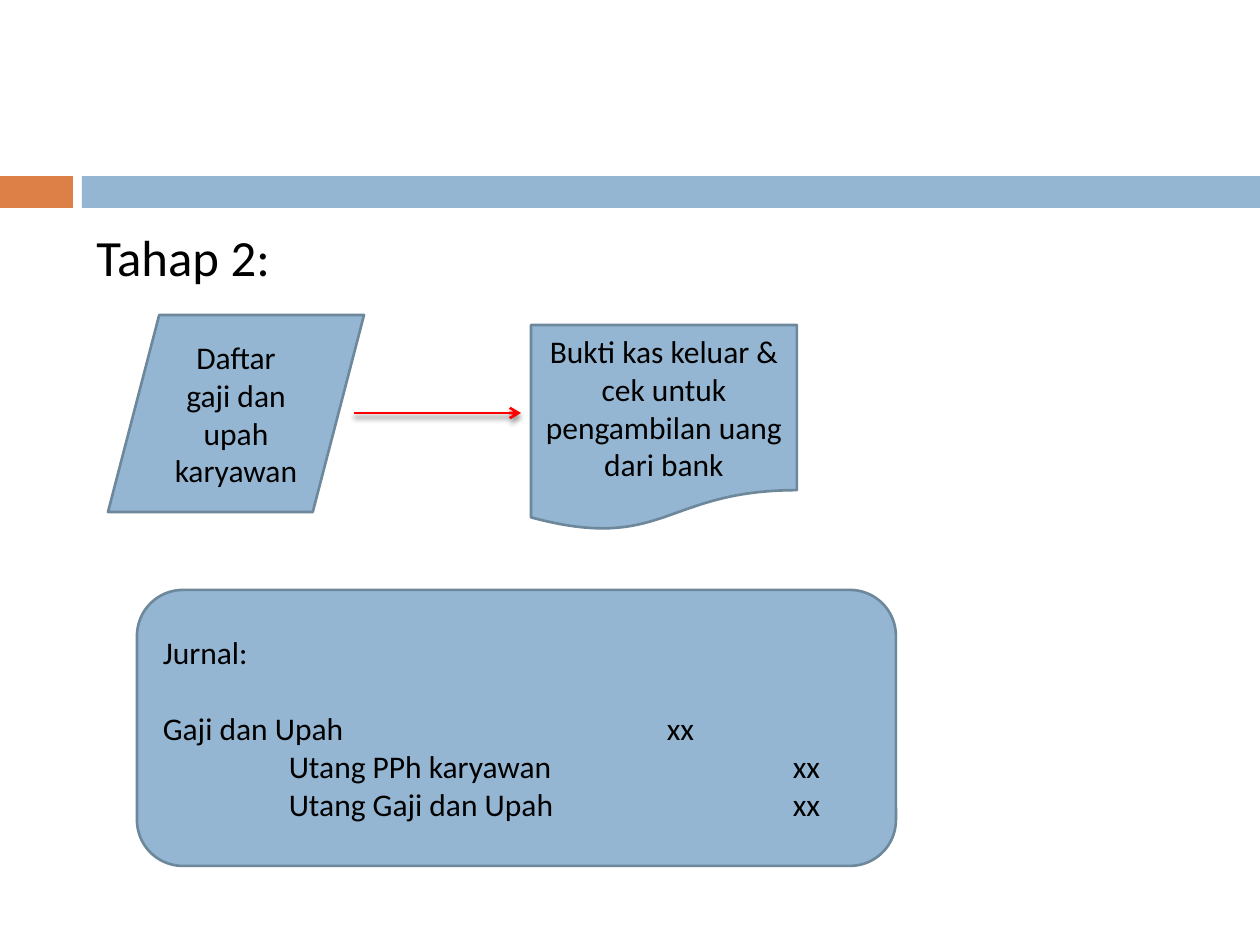
"""Build the payroll stage 2 slide with its document flow and journal entry."""
import pptx
import pptx.dml.color
import pptx.enum.shapes
import pptx.enum.text
import pptx.oxml
import pptx.oxml.ns
import pptx.util

PX = 914400 // 126
SHAPE = pptx.enum.shapes.MSO_SHAPE
ALIGN = pptx.enum.text.PP_ALIGN
ANCHOR = pptx.enum.text.MSO_ANCHOR
COLORS = {"orange": "DD8047", "blue": "94B6D2", "edge": "6D879B",
          "text": "000000", "arrow": "FF0000", "shadow": "000000"}
FONT = "Calibri"

BANDS = [((0, 176, 73, 32), "orange"), ((82, 176, 1178, 32), "blue")]
HEADING = ("Tahap 2:", (84, 220, 1124, 70))
DOCUMENTS = [
    (SHAPE.FLOWCHART_DATA, (108, 315, 256, 197), "Daftar gaji dan upah karyawan"),
    (SHAPE.FLOWCHART_DOCUMENT, (531, 325, 266, 206),
     "Bukti kas keluar & cek untuk pengambilan uang dari bank"),
]
FLOW = (354, 413, 521, 413)
JOURNAL_BOX = (137, 590, 759, 276)
JOURNAL = [
    ("Jurnal:", (), 0),
    ("Gaji dan Upah\txx", (4,), 22),
    ("\tUtang PPh karyawan\txx", (1, 5), 0),
    ("\tUtang Gaji dan Upah\txx", (1, 5), 0),
]


def px(values):
    return [value * PX for value in values]


def rgb(name):
    return pptx.dml.color.RGBColor.from_string(COLORS[name])


def style(paragraph, size, align=ALIGN.LEFT):
    paragraph.alignment = align
    for run in paragraph.runs:
        run.font.name = FONT
        run.font.size = pptx.util.Pt(size)
        run.font.color.rgb = rgb("text")


def add_block(slide, kind, box, fill, edge=None):
    block = slide.shapes.add_shape(kind, *px(box))
    block.shadow.inherit = False
    block.fill.solid()
    block.fill.fore_color.rgb = rgb(fill)
    if edge:
        block.line.color.rgb = rgb(edge)
        block.line.width = pptx.util.Pt(1.5)
    else:
        block.line.fill.background()
    block.text_frame.word_wrap = True
    block.text_frame.vertical_anchor = ANCHOR.MIDDLE
    return block


def set_tabs(paragraph, inches):
    stops = pptx.oxml.ns.qn("a:tabLst")
    tab_list = paragraph._p.get_or_add_pPr().makeelement(stops, {})
    for inch in inches:
        tab_list.append(tab_list.makeelement(
            pptx.oxml.ns.qn("a:tab"),
            {"pos": str(pptx.util.Inches(inch)), "algn": "l"}))
    paragraph._p.get_or_add_pPr().append(tab_list)


def add_flow(slide):
    flow = slide.shapes.add_connector(
        pptx.enum.shapes.MSO_CONNECTOR.STRAIGHT, *px(FLOW))
    flow.line.color.rgb = rgb("arrow")
    flow.line.width = pptx.util.Pt(1.5)
    namespace = pptx.oxml.ns.nsdecls("a")
    flow.line._get_or_add_ln().append(
        pptx.oxml.parse_xml(f'<a:tailEnd {namespace} type="arrow"/>'))
    flow._element.spPr.append(pptx.oxml.parse_xml(
        f'<a:effectLst {namespace}><a:outerShdw blurRad="{pptx.util.Pt(3)}" '
        f'dist="{pptx.util.Pt(2.4)}" dir="5400000" rotWithShape="0">'
        f'<a:srgbClr val="{COLORS["shadow"]}"><a:alpha val="45000"/></a:srgbClr>'
        '</a:outerShdw></a:effectLst>'))


def main():
    deck = pptx.Presentation()
    deck.slide_width = pptx.util.Inches(10)
    deck.slide_height = pptx.util.Inches(7.5)
    slide = deck.slides.add_slide(deck.slide_layouts[6])

    for box, fill in BANDS:
        add_block(slide, SHAPE.RECTANGLE, box, fill)

    words, box = HEADING
    heading = slide.shapes.add_textbox(*px(box)).text_frame
    heading.word_wrap = True
    heading.text = words
    style(heading.paragraphs[0], 29)

    for kind, box, words in DOCUMENTS:
        document = add_block(slide, kind, box, "blue", "edge")
        document.text_frame.text = words
        style(document.text_frame.paragraphs[0], 18, ALIGN.CENTER)

    add_flow(slide)

    journal = add_block(slide, SHAPE.ROUNDED_RECTANGLE, JOURNAL_BOX, "blue", "edge")
    journal.text_frame.text = "\n".join(words for words, _, _ in JOURNAL)
    for entry, (_, tabs, gap) in zip(journal.text_frame.paragraphs, JOURNAL):
        if tabs:
            set_tabs(entry, tabs)
        if gap:
            entry.space_before = pptx.util.Pt(gap)
        style(entry, 18)

    deck.save("out.pptx")


if __name__ == "__main__":
    main()
